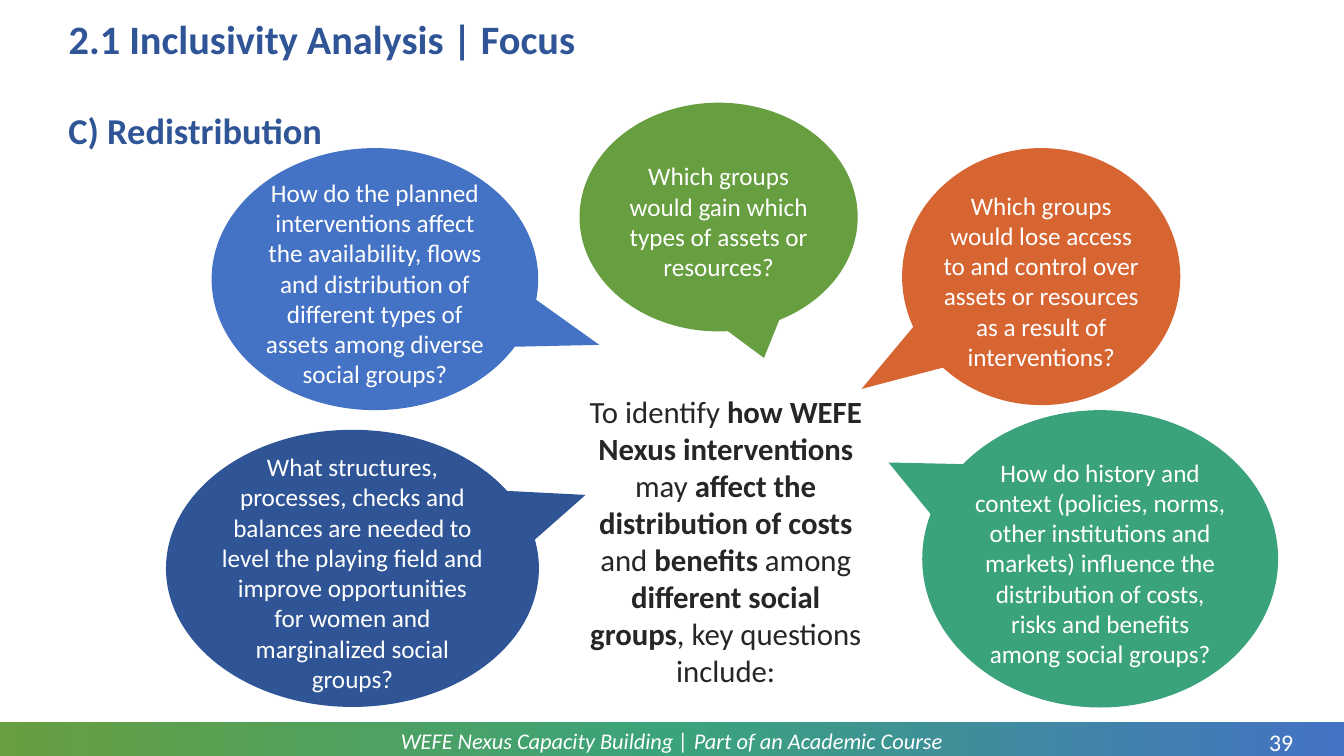
"""Builds the Redistribution slide of the inclusivity analysis chapter."""
from copy import deepcopy
from dataclasses import dataclass

from pptx import Presentation
from pptx.dml.color import RGBColor
from pptx.enum.shapes import MSO_SHAPE
from pptx.enum.text import MSO_ANCHOR, MSO_AUTO_SIZE, PP_ALIGN
from pptx.oxml.ns import qn
from pptx.util import Pt

RECT, CALLOUT = MSO_SHAPE.RECTANGLE, MSO_SHAPE.OVAL_CALLOUT
TOP, MIDDLE = MSO_ANCHOR.TOP, MSO_ANCHOR.MIDDLE
LEFT, CENTER = PP_ALIGN.LEFT, PP_ALIGN.CENTER
NO_FIT = MSO_AUTO_SIZE.NONE


@dataclass(frozen=True)
class Theme:
    """Colours and type sizes of the slide."""
    font: str = "Calibri"
    navy: str = "2F5597"
    blue: str = "4472C4"
    green: str = "669E40"
    orange: str = "D66532"
    teal: str = "3BA37B"
    ink: str = "262626"
    white: str = "FFFFFF"
    title: float = 28.8
    subtitle: float = 26
    core: float = 22
    question: float = 18
    number: float = 17
    footer: float = 16


@dataclass(frozen=True)
class Box:
    """Left, top, width and height in points."""
    left: float
    top: float
    width: float
    height: float

    def emu(self) -> list:
        """Return the four lengths as Pt values."""
        return [Pt(v) for v in (self.left, self.top, self.width, self.height)]


@dataclass(frozen=True)
class Style:
    """Look of one text frame."""
    size: float
    color: str
    bold: bool = False
    italic: bool = False
    align: PP_ALIGN = CENTER
    anchor: MSO_ANCHOR = MIDDLE
    spacing: float = 1.0
    insets: tuple = (7.2, 3.6, 7.2, 3.6)


@dataclass(frozen=True)
class Question:
    """One speech bubble and its tail tip, relative to its centre."""
    text: str
    box: Box
    tip: tuple
    color: str


T = Theme()
HEADING = Style(T.title, T.navy, bold=True, align=LEFT, spacing=0.9)
SUBHEADING = Style(T.subtitle, T.navy, bold=True, align=LEFT, spacing=0.9)
CORE = Style(T.core, T.ink, anchor=TOP)
BUBBLE = Style(T.question, T.white, insets=(0, 5.76, 0, 0))
FOOTER = Style(T.footer, T.white, italic=True)
NUMBER = Style(T.number, T.white, anchor=TOP, insets=(0, 0, 0, 0))

CORE_RUNS = [
    ("To identify ", False), ("how WEFE Nexus interventions", True),
    (" may ", False), ("affect the distribution of costs ", True),
    ("and ", False), ("benefits", True), (" among ", False),
    ("different social groups", True), (", key questions include:", False),
]
QUESTIONS = [
    Question("What structures, processes, checks and balances are needed to level the "
             "playing field and improve opportunities for women and marginalized social groups?",
             Box(118.6, 307, 266.4, 198), (0.625, -0.265), T.navy),
    Question("How do the planned interventions affect the availability, flows and "
             "distribution of different types of assets among diverse social groups?",
             Box(151.2, 105.8, 233.3, 187.2), (0.687, 0.251), T.blue),
    Question("Which groups would gain which types of assets or resources?",
             Box(414, 73.4, 198.7, 163.4), (0.163, 0.616), T.green),
    Question("Which groups would lose access to and control over assets or resources "
             "as a result of interventions?",
             Box(644.4, 105.8, 198.7, 183.6), (-0.646, 0.437), T.orange),
    Question("How do history and context (policies, norms, other institutions and markets) "
             "influence the distribution of costs, risks and benefits among social groups?",
             Box(658.8, 293, 254.2, 212.4), (-0.595, -0.324), T.teal),
]


def write(shape, runs: list, style: Style) -> None:
    """Fill a shape with one paragraph of (text, bold) runs."""
    tf = shape.text_frame
    left, top, right, bottom = (Pt(v) for v in style.insets)
    frame = dict(word_wrap=True, auto_size=NO_FIT, vertical_anchor=style.anchor,
                 margin_left=left, margin_top=top, margin_right=right, margin_bottom=bottom)
    for key, value in frame.items():
        setattr(tf, key, value)
    p = tf.paragraphs[0]
    p.alignment, p.line_spacing = style.align, style.spacing
    for text, bold in runs:
        r = p.add_run()
        r.text = text
        font = dict(name=T.font, size=Pt(style.size), bold=bold, italic=style.italic)
        for key, value in font.items():
            setattr(r.font, key, value)
        r.font.color.rgb = RGBColor.from_string(style.color)


def add_text(s, box: Box, text: str, style: Style) -> None:
    """Add a text box with a single run."""
    write(s.shapes.add_textbox(*box.emu()), [(text, style.bold)], style)


def add_band(s, box: Box, colors: list) -> None:
    """Add a rectangle with an evenly spaced left-to-right gradient."""
    sp = s.shapes.add_shape(RECT, *box.emu())
    sp.shadow.inherit = False
    sp.line.fill.background()
    sp.fill.gradient()
    sp.fill.gradient_angle = 0
    stops = sp.element.spPr.find(".//" + qn("a:gsLst"))
    while len(stops) < len(colors):
        stops.append(deepcopy(stops[0]))
    for i, (stop, color) in enumerate(zip(sp.fill.gradient_stops, colors)):
        stop.position = i / (len(colors) - 1)
        stop.color.rgb = RGBColor.from_string(color)


def add_question(s, question: Question) -> None:
    """Add one speech bubble."""
    sp = s.shapes.add_shape(CALLOUT, *question.box.emu())
    sp.shadow.inherit = False
    sp.line.fill.background()
    sp.fill.solid()
    sp.fill.fore_color.rgb = RGBColor.from_string(question.color)
    for i, value in enumerate(question.tip):
        sp.adjustments[i] = value
    write(sp, [(question.text, False)], BUBBLE)


def main() -> None:
    """Build and save the slide."""
    prs = Presentation()
    prs.slide_width, prs.slide_height = Pt(960), Pt(540)
    s = prs.slides.add_slide(prs.slide_layouts[5])

    title = s.shapes.title
    title.left, title.top, title.width, title.height = Box(41.8, 9.4, 874.8, 40.3).emu()
    write(title, [("2.1 Inclusivity Analysis | Focus", True)], HEADING)

    add_band(s, Box(0, 515.5, 960, 24.5), [T.green, T.teal, T.blue])
    add_text(s, Box(66.2, 516.2, 827.3, 25.9),
             "WEFE Nexus Capacity Building | Part of an Academic Course", FOOTER)
    add_text(s, Box(893.5, 519.8, 43.2, 20.2), "39", NUMBER)
    add_text(s, Box(41.8, 73.4, 862.6, 42.5), "C) Redistribution", SUBHEADING)
    write(s.shapes.add_textbox(*Box(413.3, 277.2, 210.2, 220.3).emu()), CORE_RUNS, CORE)
    for question in QUESTIONS:
        add_question(s, question)
    prs.save("out.pptx")


if __name__ == "__main__":
    main()
